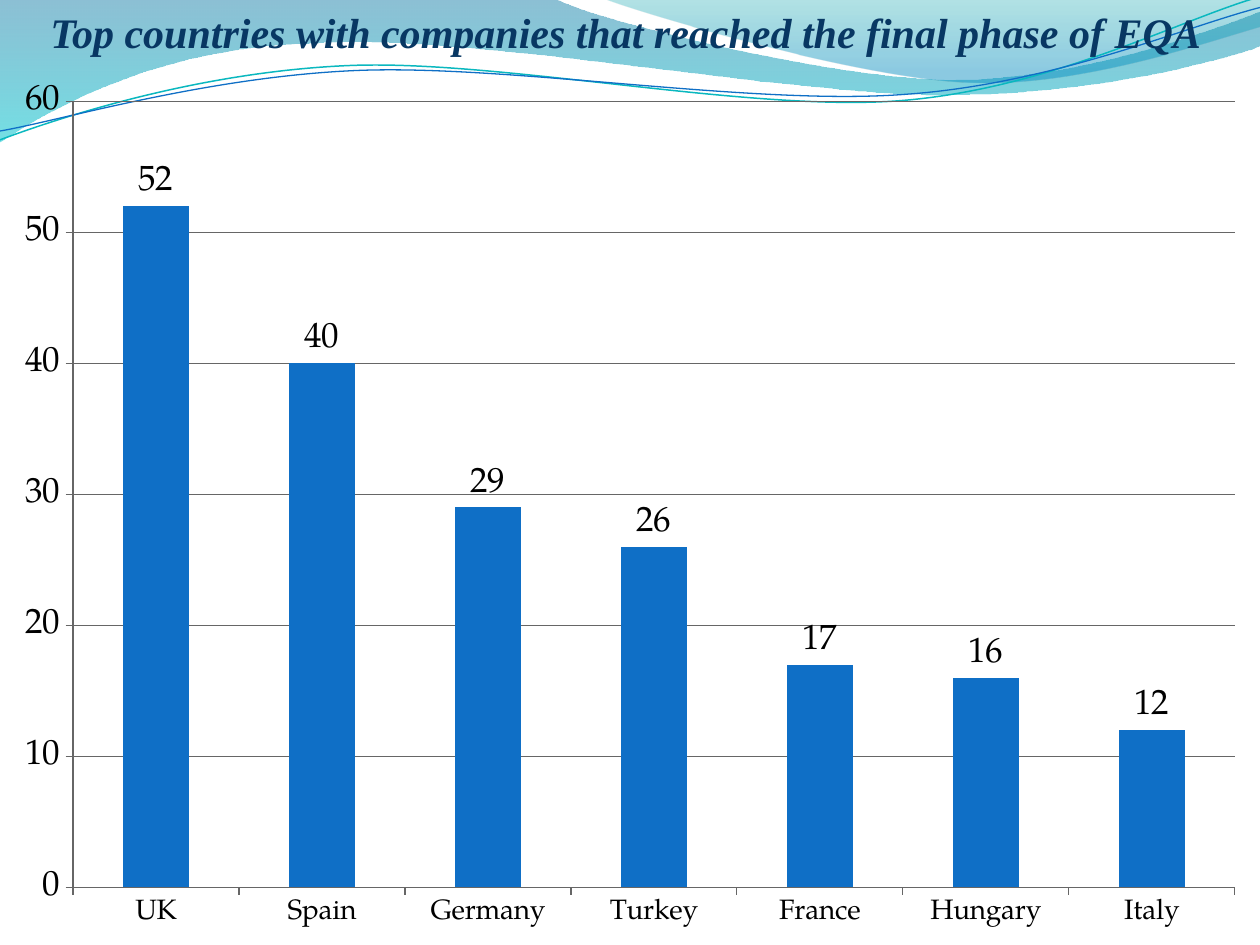
import dataclasses
import math

import lxml.etree
import pptx
import pptx.chart.data
import pptx.dml.color
import pptx.enum.chart
import pptx.enum.text
import pptx.oxml.ns
import pptx.util

Inches = pptx.util.Inches
Pt = pptx.util.Pt
qn = pptx.oxml.ns.qn


@dataclasses.dataclass(frozen=True)
class Theme:
    """Colours, fonts and type sizes of the slide."""

    title_font: str = "Times New Roman"
    chart_font: str = "TeX Gyre Pagella"
    title_size: int = 24
    value_size: int = 20
    category_size: int = 16
    chart_size: int = 10
    title: str = "083763"
    text: str = "000000"
    bar: str = "0F6FC6"
    axis: str = "666666"
    teal_line: str = "0AB8BF"
    wave: tuple = ((0, "0074A1", 45), (1, "00C6CF", 55))
    crest: tuple = ((0, "00A1A9", 30), (0.8, "008BBF", 45))


def rgb(code):
    """Return the colour for a hex code."""
    return pptx.dml.color.RGBColor.from_string(code)


def turn(point, centre, degrees):
    """Turn a point clockwise about a centre."""
    cos, sin = math.cos(math.radians(degrees)), math.sin(math.radians(degrees))
    x, y = point[0] - centre[0], point[1] - centre[1]
    return centre[0] + x * cos - y * sin, centre[1] + x * sin + y * cos


class SlideBuilder:
    """Hold the theme and the current slide."""

    def __init__(self, slide, theme):
        """Keep the slide and its theme."""
        self.slide = slide
        self.theme = theme

    def outline(self, start, pieces, close):
        """Add a freeform whose three-point pieces are Bezier curves."""
        builder = self.slide.shapes.build_freeform(*map(Inches, start))
        corners = [tuple(map(Inches, point)) for piece in pieces for point in piece]
        builder.add_line_segments(corners, close=close)
        shape = builder.convert_to_shape()
        shape.shadow.inherit = False
        segments = iter(list(shape.element.spPr.iter(qn("a:lnTo"))))
        for piece in pieces:
            first, *others = [next(segments) for _ in piece]
            if others:
                curve = lxml.etree.Element(qn("a:cubicBezTo"))
                first.addprevious(curve)
                for segment in (first, *others):
                    curve.append(segment[0])
                    segment.getparent().remove(segment)
        return shape

    def band(self, start, pieces, stops):
        """Add a closed wave with a translucent vertical gradient."""
        wave = self.outline(start, pieces, True)
        wave.line.fill.background()
        wave.fill.gradient()
        wave.fill.gradient_angle = 270
        for stop, (position, colour, _) in zip(wave.fill.gradient_stops, stops):
            stop.position = position
            stop.color.rgb = rgb(colour)
        for node, (_, _, opacity) in zip(wave.element.spPr.iter(qn("a:srgbClr")), stops):
            alpha = lxml.etree.SubElement(node, qn("a:alpha"))
            alpha.set("val", str(opacity * 1000))

    def ripple(self, start, pieces, centre, colour, width, tilt=-2.7):
        """Add a tilted open curve."""
        level = [[turn(point, centre, -tilt) for point in piece] for piece in pieces]
        curve = self.outline(turn(start, centre, -tilt), level, False)
        curve.rotation = tilt
        curve.fill.background()
        curve.line.color.rgb = rgb(colour)
        curve.line.width = Pt(width)

    def column_chart(self, counts, left, top, width, height):
        """Add the labelled column chart."""
        theme = self.theme
        data = pptx.chart.data.CategoryChartData()
        data.categories = counts.keys()
        data.add_series("Series 1", counts.values())
        chart = self.slide.shapes.add_chart(
            pptx.enum.chart.XL_CHART_TYPE.COLUMN_CLUSTERED,
            Inches(left), Inches(top), Inches(width), Inches(height), data).chart
        chart.has_legend = False
        chart.has_title = False
        chart.font.name = theme.chart_font
        chart.font.size = Pt(theme.chart_size)
        chart.font.color.rgb = rgb(theme.text)

        axes = ((chart.category_axis, theme.category_size), (chart.value_axis, theme.value_size))
        for axis, size in axes:
            axis.major_tick_mark = pptx.enum.chart.XL_TICK_MARK.OUTSIDE
            axis.tick_labels.font.size = Pt(size)
            axis.format.line.color.rgb = rgb(theme.axis)
        chart.value_axis.minimum_scale = 0
        chart.value_axis.maximum_scale = 60
        chart.value_axis.major_unit = 10
        chart.value_axis.has_major_gridlines = True
        chart.value_axis.major_gridlines.format.line.color.rgb = rgb(theme.axis)

        plot = chart.plots[0]
        plot.gap_width = 150
        plot.vary_by_categories = False
        bars = plot.series[0]
        bars.format.fill.solid()
        bars.format.fill.fore_color.rgb = rgb(theme.bar)
        labels = bars.data_labels
        labels.show_value = True
        labels.position = pptx.enum.chart.XL_LABEL_POSITION.OUTSIDE_END
        labels.font.size = Pt(theme.value_size)

    def title(self, wording, left, top, width, height):
        """Fill the title placeholder and bring it to the front."""
        heading = self.slide.shapes.title
        heading.left, heading.top = Inches(left), Inches(top)
        heading.width, heading.height = Inches(width), Inches(height)
        frame = heading.text_frame
        frame.word_wrap = True
        frame.auto_size = pptx.enum.text.MSO_AUTO_SIZE.SHAPE_TO_FIT_TEXT
        frame.vertical_anchor = pptx.enum.text.MSO_ANCHOR.TOP
        paragraph = frame.paragraphs[0]
        paragraph.alignment = pptx.enum.text.PP_ALIGN.CENTER
        run = paragraph.add_run()
        run.text = wording
        run.font.name = self.theme.title_font
        run.font.size = Pt(self.theme.title_size)
        run.font.bold = run.font.italic = True
        run.font.color.rgb = rgb(self.theme.title)
        self.slide.shapes.element.append(heading.element)


def main():
    """Build and save the presentation."""
    deck = pptx.Presentation()
    deck.slide_width, deck.slide_height = Inches(10), Inches(7.5)
    theme = Theme()
    page = SlideBuilder(deck.slides.add_slide(deck.slide_layouts[5]), theme)

    page.band((0, 0), [
        [(4.4, -0.01)],
        [(4.76, 0.17), (6.64, 0.63), (7.58, 0.63)],
        [(8.53, 0.63), (9.58, 0.26), (10, 0.09)],
        [(10.01, 0.36)],
        [(9.83, 0.44), (8.7, 0.76), (7.46, 0.75)],
        [(6.22, 0.75), (3.82, 0.28), (2.57, 0.34)],
        [(1.29, 0.36), (0.46, 0.83), (-0.01, 1.13)],
    ], theme.wave)
    page.band((4.79, -0.01), [
        [(5.09, 0.11), (6.82, 0.62), (7.69, 0.65)],
        [(8.56, 0.69), (9.61, 0.32), (10, 0.21)],
        [(10, 0)],
    ], theme.crest)
    page.ripple((0, 1.11), [
        [(0.48, 0.93), (1.58, 0.57), (2.77, 0.52)],
        [(3.95, 0.47), (5.93, 0.89), (7.13, 0.8)],
        [(8.33, 0.71), (9.38, 0.15), (9.98, -0.02)],
    ], (4.99, 0.58), theme.teal_line, 0.85)
    page.ripple((0, 1.04), [
        [(0.47, 0.96), (1.64, 0.61), (2.83, 0.56)],
        [(4.03, 0.51), (5.97, 0.84), (7.17, 0.75)],
        [(8.36, 0.67), (9.41, 0.21), (10, 0.06)],
    ], (5, 0.59), theme.bar, 0.75)

    finalists = {"UK": 52, "Spain": 40, "Germany": 29, "Turkey": 26,
                 "France": 17, "Hungary": 16, "Italy": 12}
    page.column_chart(finalists, 0, 0.52, 10, 6.98)
    page.title("Top countries with companies that reached the final phase of EQA ", 0, 0, 10, 0.5)
    deck.save("out.pptx")


if __name__ == "__main__":
    main()
